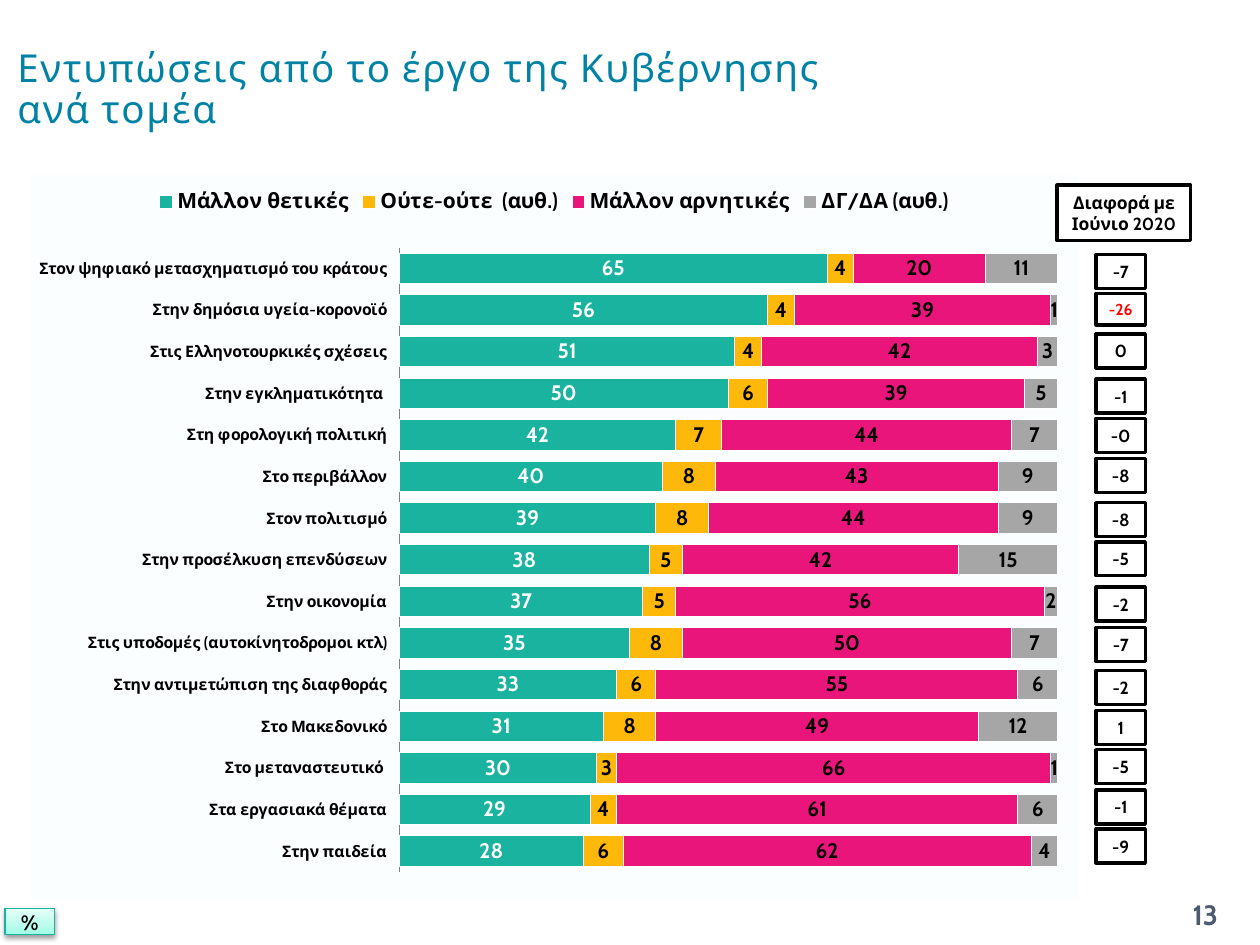
from dataclasses import dataclass
from typing import Optional

from lxml import etree
from pptx import Presentation
from pptx.chart.data import CategoryChartData
from pptx.dml.color import RGBColor
from pptx.enum.chart import XL_CHART_TYPE, XL_LEGEND_POSITION, XL_TICK_LABEL_POSITION, XL_TICK_MARK
from pptx.enum.shapes import MSO_SHAPE
from pptx.enum.text import MSO_ANCHOR, PP_ALIGN
from pptx.oxml import parse_xml
from pptx.util import Emu, Pt

STACKED = XL_CHART_TYPE.BAR_STACKED_100
TOP = XL_LEGEND_POSITION.TOP
LOW = XL_TICK_LABEL_POSITION.LOW
NO_TICK = XL_TICK_MARK.NONE
RECT = MSO_SHAPE.RECTANGLE
MIDDLE = MSO_ANCHOR.MIDDLE
LEFT, CENTER = PP_ALIGN.LEFT, PP_ALIGN.CENTER

SCALE = 9144  # EMU in one px: 100 px to the inch
DRAW = "http://schemas.openxmlformats.org/drawingml/2006/main"
CHART = "http://schemas.openxmlformats.org/drawingml/2006/chart"


@dataclass(frozen=True)
class Theme:
    font: str = "Cabin"
    title: str = "0082A5"
    page: str = "4E5B6F"
    ink: str = "000000"
    alert: str = "FF0000"
    paper: str = "FFFFFF"
    axis: str = "7F7F7F"
    wash: str = "C5F3FF"
    edge: str = "16B39E"
    mint: tuple = ((0, "9DFDE8"), (35, "BBFCED"), (100, "E4FFF9"))
    huge: int = 22
    large: int = 16
    body: int = 12
    small: int = 10
    tiny: int = 9


THEME = Theme()


@dataclass(frozen=True)
class Box:
    left: int
    top: int
    width: int
    height: int

    def emu(self) -> list[Emu]:
        return [Emu(n * SCALE) for n in (self.left, self.top, self.width, self.height)]


@dataclass(frozen=True)
class Text:
    words: str
    size: int = THEME.small
    color: str = THEME.ink
    bold: bool = True
    align: int = CENTER
    inset: int = 0
    track: Optional[int] = None  # hundredths of a point
    lines: Optional[float] = None


@dataclass(frozen=True)
class Series:
    name: str
    color: str
    label: str
    values: tuple


@dataclass(frozen=True)
class Gap:
    """Change since June 2020, shown beside one bar."""
    top: int
    words: str
    size: int = THEME.small
    color: str = THEME.ink
    height: int = 27


AREAS = (
    "Στον ψηφιακό μετασχηματισμό του κράτους", "Στην δημόσια υγεία-κορονοϊό",
    "Στις Ελληνοτουρκικές σχέσεις", "Στην εγκληματικότητα ",
    "Στη φορολογική πολιτική", "Στο περιβάλλον", "Στον πολιτισμό",
    "Στην προσέλκυση επενδύσεων", "Στην οικονομία",
    "Στις υποδομές (αυτοκίνητοδρομοι κτλ)", "Στην αντιμετώπιση της διαφθοράς",
    "Στο Μακεδονικό", "Στο μεταναστευτικό ", "Στα εργασιακά θέματα", "Στην παιδεία",
)
SERIES = (
    Series("Μάλλον θετικές", "1AB39F", THEME.paper,
           (65, 56, 51, 50, 42, 40, 39, 38, 37, 35, 33, 31, 30, 29, 28)),
    Series("Ούτε-ούτε  (αυθ.)", "FEB80A", THEME.ink,
           (4, 4, 4, 6, 7, 8, 8, 5, 5, 8, 6, 8, 3, 4, 6)),
    Series("Μάλλον αρνητικές", "EA157A", THEME.ink,
           (20, 39, 42, 39, 44, 43, 44, 42, 56, 50, 55, 49, 66, 61, 62)),
    Series("ΔΓ/ΔΑ (αυθ.)", "A6A6A6", THEME.ink,
           (11, 1, 3, 5, 7, 9, 9, 15, 2, 7, 6, 12, 1, 6, 4)),
)
GAPS = (
    Gap(202, "-7"), Gap(233, "-26", THEME.tiny, THEME.alert, 25), Gap(265, "0"),
    Gap(301, "-1"), Gap(332, "-0"), Gap(364, "-8"), Gap(399, "-8"), Gap(430, "-5"),
    Gap(466, "-2"), Gap(498, "-7"), Gap(532, "-2"), Gap(564, "1"), Gap(595, "-5"),
    Gap(627, "-1"), Gap(658, "-9"),
)


def rgb(code: str) -> RGBColor:
    return RGBColor.from_string(code)


def style(font, size: int, color: str, bold: bool) -> None:
    font.name, font.size, font.bold = THEME.font, Pt(size), bold
    font.color.rgb = rgb(color)


def write(shape, text: Text) -> None:
    frame = shape.text_frame
    frame.word_wrap = True
    frame.vertical_anchor = MIDDLE
    frame.margin_left = frame.margin_right = Emu(text.inset * SCALE)
    frame.margin_top = frame.margin_bottom = 0
    para = frame.paragraphs[0]
    para.alignment = text.align
    if text.lines:
        para.line_spacing = text.lines
    run = para.add_run()
    run.text = text.words
    style(run.font, text.size, text.color, text.bold)
    if text.track:
        run.font._element.set("spc", str(text.track))


def label(slide, box: Box, text: Text) -> None:
    write(slide.shapes.add_textbox(*box.emu()), text)


def frame(slide, box: Box, text: Text, edge: str = THEME.ink, weight: float = 2):
    shape = slide.shapes.add_shape(RECT, *box.emu())
    shape.shadow.inherit = False
    shape.fill.solid()
    shape.fill.fore_color.rgb = rgb(THEME.paper)
    shape.line.color.rgb = rgb(edge)
    shape.line.width = Pt(weight)
    write(shape, text)
    return shape


def glaze(shape) -> None:
    """Give the shape the mint gradient and a soft shadow below."""
    props = shape._element.spPr
    stops = "".join(f'<a:gs pos="{at * 1000}"><a:srgbClr val="{code}"/></a:gs>'
                    for at, code in THEME.mint)
    fill = parse_xml(f'<a:gradFill xmlns:a="{DRAW}" rotWithShape="1"><a:gsLst>{stops}</a:gsLst>'
                     '<a:lin ang="16200000" scaled="1"/></a:gradFill>')
    props.replace(props.find(f"{{{DRAW}}}solidFill"), fill)
    props.find(f"{{{DRAW}}}effectLst").append(parse_xml(
        f'<a:outerShdw xmlns:a="{DRAW}" blurRad="{Pt(3.1)}" dist="{Pt(1.6)}" dir="5400000" '
        f'rotWithShape="0"><a:srgbClr val="{THEME.ink}"><a:alpha val="38000"/></a:srgbClr>'
        '</a:outerShdw>'))


def place(chart) -> None:
    """Fix the inner plot area and wash the chart's ground."""
    root = chart._chartSpace.chart
    plot = root.plotArea
    for old in plot.findall(f"{{{CHART}}}layout"):
        plot.remove(old)
    layout = etree.Element(f"{{{CHART}}}layout")
    manual = etree.SubElement(layout, f"{{{CHART}}}manualLayout")
    for tag, val in (("layoutTarget", "inner"), ("xMode", "edge"), ("yMode", "edge"),
                     ("x", "0.352"), ("y", "0.1"), ("w", "0.628"), ("h", "0.862")):
        etree.SubElement(manual, f"{{{CHART}}}{tag}", val=val)
    plot.insert(0, layout)
    root.addnext(parse_xml(
        f'<c:spPr xmlns:c="{CHART}" xmlns:a="{DRAW}"><a:solidFill><a:srgbClr val="{THEME.wash}">'
        '<a:alpha val="6000"/></a:srgbClr></a:solidFill><a:ln><a:noFill/></a:ln></c:spPr>'))


def graph(slide, box: Box) -> None:
    data = CategoryChartData(number_format="0")
    data.categories = AREAS
    for item in SERIES:
        data.add_series(item.name, item.values)
    chart = slide.shapes.add_chart(STACKED, *box.emu(), data).chart
    style(chart.font, THEME.small, THEME.ink, False)
    chart.has_title = False
    chart.has_legend = True
    chart.legend.position = TOP
    chart.legend.include_in_layout = False
    style(chart.legend.font, THEME.body, THEME.ink, True)
    names = chart.category_axis
    names.reverse_order = True
    names.major_tick_mark = names.minor_tick_mark = NO_TICK
    names.tick_label_position = LOW
    names.format.line.color.rgb = rgb(THEME.axis)
    style(names.tick_labels.font, THEME.tiny, THEME.ink, True)
    chart.value_axis.visible = False
    chart.value_axis.has_major_gridlines = False
    plot = chart.plots[0]
    plot.gap_width, plot.overlap, plot.vary_by_categories = 37, 100, False
    for item, bars in zip(SERIES, plot.series):
        bars.format.fill.solid()
        bars.format.fill.fore_color.rgb = rgb(item.color)
        bars.format.line.color.rgb = rgb(THEME.paper)
        tags = bars.data_labels
        tags.show_value = True
        tags.number_format, tags.number_format_is_linked = "0", False
        style(tags.font, THEME.body, item.label, True)
    place(chart)


def main() -> None:
    deck = Presentation()
    deck.slide_width, deck.slide_height = Emu(1000 * SCALE), Emu(750 * SCALE)
    slide = deck.slides.add_slide(deck.slide_layouts[6])
    label(slide, Box(917, 706, 79, 40), Text("13", THEME.large, THEME.page))
    label(slide, Box(4, 13, 677, 118),
          Text("Εντυπώσεις από το έργο της Κυβέρνησης ανά τομέα", THEME.huge, THEME.title,
               bold=False, align=LEFT, inset=10, track=100, lines=0.9))
    graph(slide, Box(24, 139, 832, 575))
    glaze(frame(slide, Box(4, 721, 39, 21), Text("%", THEME.body), THEME.edge, 0.75))
    for gap in GAPS:
        frame(slide, Box(870, gap.top, 39, gap.height), Text(gap.words, gap.size, gap.color))
    frame(slide, Box(839, 147, 106, 44), Text("Διαφορά με Ιούνιο 2020", inset=5))
    deck.save("out.pptx")


if __name__ == "__main__":
    main()
